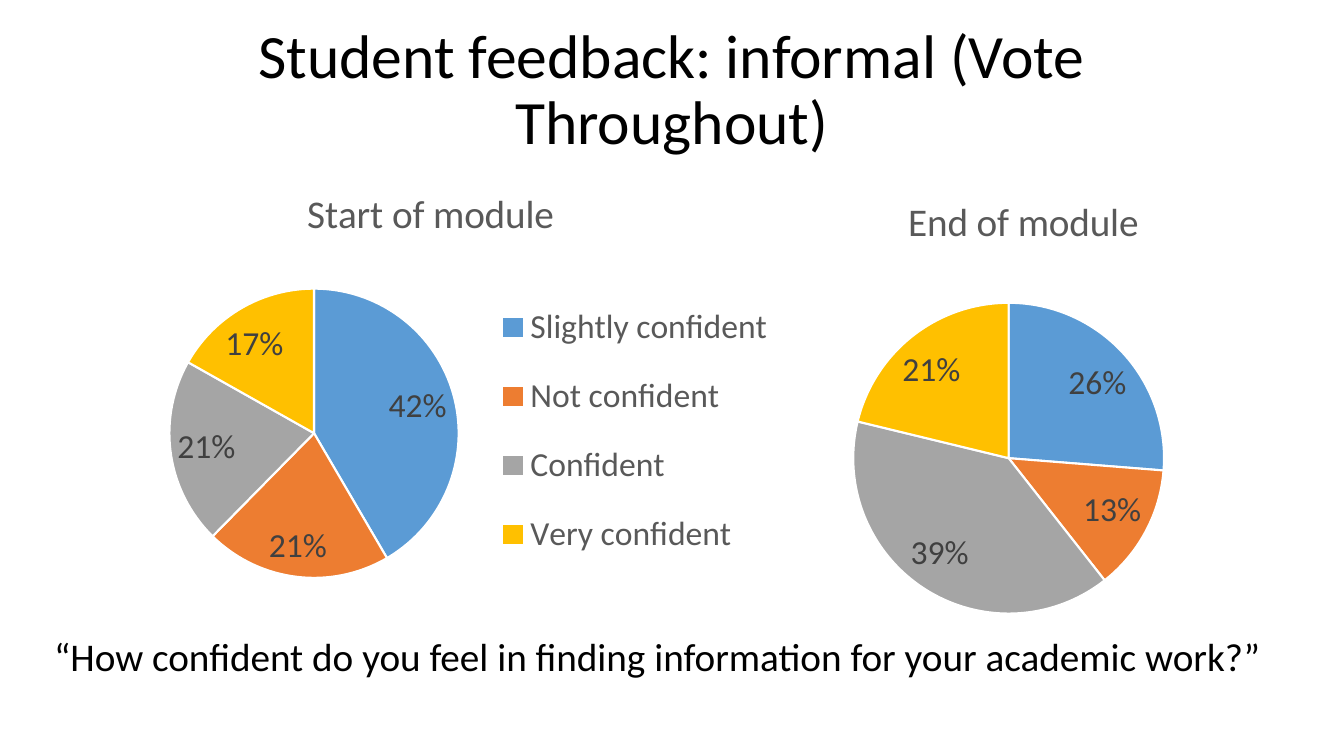
from lxml import etree
from pptx import Presentation
from pptx.chart.data import CategoryChartData
from pptx.dml.color import RGBColor
from pptx.enum import chart as charts, text
from pptx.oxml.ns import qn
from pptx.util import Pt

FONT = "Calibri"
SLICE_COLORS = ("5B9BD5", "ED7D31", "A5A5A5", "FFC000")
CONFIDENCE_LEVELS = ("Slightly confident", "Not confident", "Confident", "Very confident")


def color(hex_string):
    return RGBColor.from_string(hex_string)


def style_font(font, size, hex_string):
    font.name = FONT
    font.size = Pt(size)
    font.bold = False
    font.color.rgb = color(hex_string)


def add_text(slide, box, wording, size, anchor, alignment, bottom_inset=3.6):
    shape = slide.shapes.add_textbox(*map(Pt, box))
    frame = shape.text_frame
    frame.word_wrap = True
    frame.vertical_anchor = anchor
    frame.margin_bottom = Pt(bottom_inset)
    paragraph = frame.paragraphs[0]
    paragraph.text = wording
    paragraph.alignment = alignment
    style_font(paragraph.font, size, "000000")
    return paragraph


def set_layout(element, following_tags, box, target=None):
    """Fix a chart part at box: left, top, width, height as shares of the chart."""
    for old_layout in element.findall(qn("c:layout")):
        element.remove(old_layout)
    layout = etree.Element(qn("c:layout"))
    manual = etree.SubElement(layout, qn("c:manualLayout"))
    settings = [("layoutTarget", target)] if target else []
    settings += [("xMode", "edge"), ("yMode", "edge")]
    settings += zip("xywh", map(str, box))
    for tag, value in settings:
        etree.SubElement(manual, qn(f"c:{tag}")).set("val", value)
    following = next(child for child in element
                     if child.tag in [qn(f"c:{tag}") for tag in following_tags])
    following.addprevious(layout)


def add_pie(slide, box, title, categories, values, plot_box, legend_box=None):
    data = CategoryChartData(number_format="0%")
    data.categories = categories
    data.add_series("Series 1", values)
    chart = slide.shapes.add_chart(charts.XL_CHART_TYPE.PIE, *map(Pt, box), data).chart
    style_font(chart.font, 10, "000000")

    chart.has_title = True
    heading = chart.chart_title.text_frame.paragraphs[0]
    heading.text = title
    style_font(heading.font, 28, "595959")
    chart.chart_title.include_in_layout = False

    plot = chart.plots[0]
    plot.vary_by_categories = True
    for index, slice_color in enumerate(SLICE_COLORS):
        point_format = plot.series[0].points[index].format
        point_format.fill.solid()
        point_format.fill.fore_color.rgb = color(slice_color)
        point_format.line.color.rgb = color("FFFFFF")
        point_format.line.width = Pt(1.5)

    labels = plot.series[0].data_labels
    labels.show_value = True
    labels.number_format = "0%"
    labels.number_format_is_linked = False
    labels.position = charts.XL_LABEL_POSITION.BEST_FIT
    style_font(labels.font, 24, "404040")

    plot_area = chart.element.find(".//" + qn("c:plotArea"))
    set_layout(plot_area, ["pieChart"], plot_box, "inner")
    chart.has_legend = legend_box is not None
    if legend_box:
        legend = chart.legend
        legend.position = charts.XL_LEGEND_POSITION.RIGHT
        legend.include_in_layout = False
        style_font(legend.font, 24, "595959")
        legend_element = chart.element.find(".//" + qn("c:legend"))
        set_layout(legend_element, ["overlay", "txPr"], legend_box)


def main():
    presentation = Presentation()
    presentation.slide_width, presentation.slide_height = Pt(960), Pt(540)
    slide = presentation.slides.add_slide(presentation.slide_layouts[6])

    title = add_text(slide, (66, 25, 828, 104.5), "Student feedback: informal (Vote Throughout)",
                     44, text.MSO_ANCHOR.MIDDLE, text.PP_ALIGN.CENTER, bottom_inset=27.5)
    title.line_spacing = 0.9
    add_pie(slide, (55.5, 118, 504, 339), "Start of module", CONFIDENCE_LEVELS,
            (0.42, 0.21, 0.21, 0.17), (0.13, 0.26, 0.41, 0.61), (0.59, 0.24, 0.4, 0.64))
    add_text(slide, (31.5, 448, 898.5, 41),
             "“How confident do you feel in finding information for your academic work?”",
             28, text.MSO_ANCHOR.TOP, text.PP_ALIGN.LEFT)
    add_pie(slide, (521.5, 124, 419, 328), "End of module", ("1", "2", "3", "4"),
            (0.26, 0.13, 0.39, 0.21), (0.21, 0.28, 0.53, 0.68))
    presentation.save("out.pptx")


if __name__ == "__main__":
    main()
